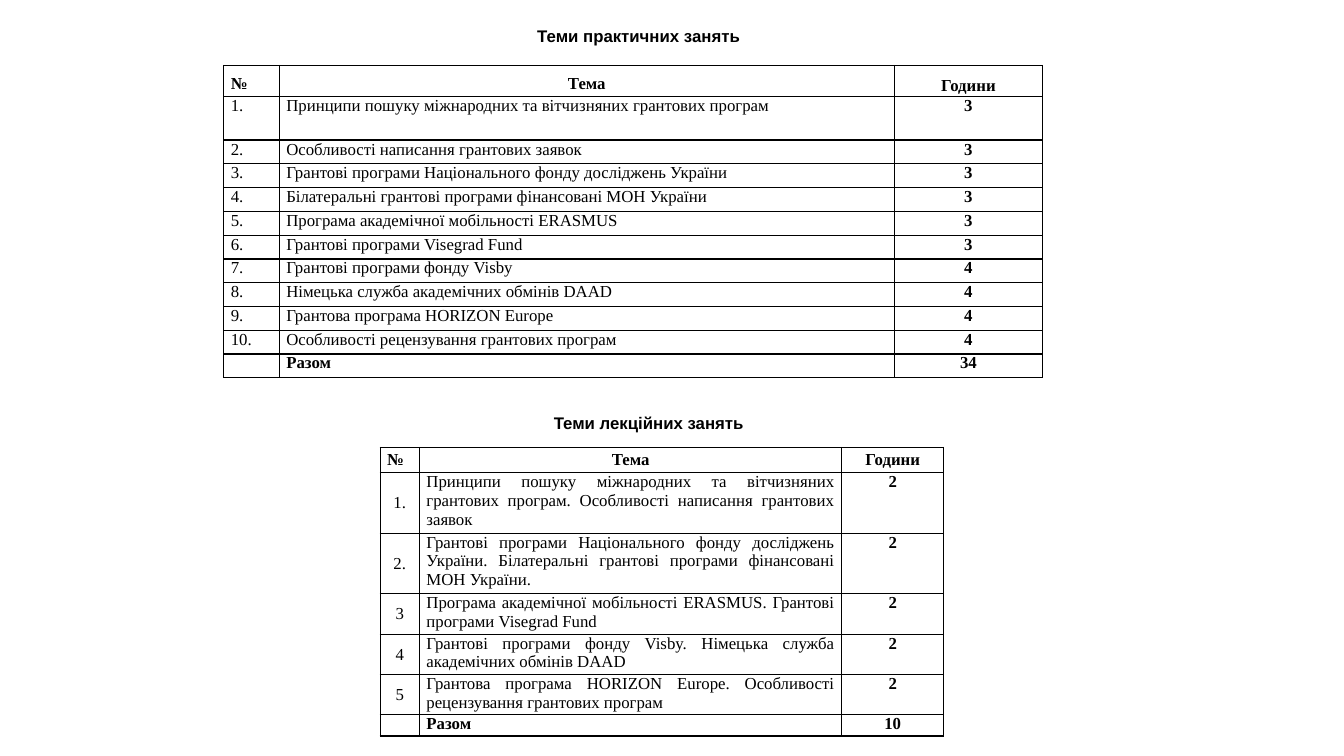
from dataclasses import dataclass
from pptx import Presentation
from pptx.dml.color import RGBColor as RGB
from pptx.enum.text import MSO_ANCHOR as Anchor, MSO_AUTO_SIZE as Fit, PP_ALIGN as Align
from pptx.oxml import parse_xml
from pptx.oxml.ns import nsdecls
from pptx.util import Inches, Pt


@dataclass(frozen=True)
class Theme:
    ink: str = "000000"
    head: str = "Arial"
    body: str = "Times New Roman"
    size: int = 12
    line: int = 1


THEME = Theme()

LABS = [
    ("1.", "Принципи пошуку міжнародних та вітчизняних грантових програм", "3"),
    ("2.", "Особливості написання грантових заявок", "3"),
    ("3.", "Грантові програми Національного фонду досліджень України", "3"),
    ("4.", "Білатеральні грантові програми фінансовані МОН України", "3"),
    ("5.", "Програма академічної мобільності ERASMUS", "3"),
    ("6.", "Грантові програми Visegrad Fund", "3"),
    ("7.", "Грантові програми фонду Visby", "4"),
    ("8.", "Німецька служба академічних обмінів DAAD", "4"),
    ("9.", "Грантова програма HORIZON Europe", "4"),
    ("10.", "Особливості рецензування грантових програм", "4"),
    ("", "Разом", "34"),
]
TALKS = [
    ("1.", "Принципи пошуку міжнародних та вітчизняних грантових програм. "
           "Особливості написання грантових заявок", "2"),
    ("2.", "Грантові програми Національного фонду досліджень України. "
           "Білатеральні грантові програми фінансовані МОН України.", "2"),
    ("3", "Програма академічної мобільності ERASMUS. Грантові програми Visegrad Fund", "2"),
    ("4", "Грантові програми фонду Visby. Німецька служба академічних обмінів DAAD", "2"),
    ("5", "Грантова програма HORIZON Europe. Особливості рецензування грантових програм", "2"),
    ("", "Разом", "10"),
]


def write(frame, text, font=THEME.body, bold=False, align=Align.CENTER, space=1.0):
    para = frame.paragraphs[0]
    para.alignment = align
    para.line_spacing = space
    if not text:
        para._p.append(parse_xml(
            f'<a:endParaRPr {nsdecls("a")} sz="{THEME.size * 100}"/>'))
        return
    run = para.add_run()
    run.text = text
    run.font.name = font
    run.font.size = Pt(THEME.size)
    run.font.bold = bold
    run.font.color.rgb = RGB.from_string(THEME.ink)


def heading(shape, box, text):
    shape.left, shape.top, shape.width, shape.height = map(Inches, box)
    frame = shape.text_frame
    frame.word_wrap = False
    frame.auto_size = Fit.SHAPE_TO_FIT_TEXT
    frame.vertical_anchor = Anchor.MIDDLE
    write(frame, text, font=THEME.head, bold=True)


def border(cell):
    props = cell._tc.get_or_add_tcPr()
    for side in "LRTB":
        props.append(parse_xml(
            f'<a:ln{side} {nsdecls("a")} w="{Pt(THEME.line)}"><a:solidFill>'
            f'<a:srgbClr val="{THEME.ink}"/></a:solidFill></a:ln{side}>'))


def plan(slide, box, cols, highs, rows, space, mid):
    rows = [("№", "Тема", "Години")] + rows
    grid = slide.shapes.add_table(len(rows), len(cols), *map(Inches, box)).table
    grid.first_row = grid.horz_banding = False
    for col, wide in zip(grid.columns, cols):
        col.width = Inches(wide)
    for r, (row, high) in enumerate(zip(rows, highs)):
        grid.rows[r].height = Inches(high)
        top, total = r == 0, r == len(rows) - 1
        for c, text in enumerate(row):
            cell = grid.cell(r, c)
            border(cell)
            cell.fill.background()
            cell.margin_left = cell.margin_right = Inches(0.07)
            cell.margin_top = cell.margin_bottom = 0
            number = mid and c == 0 and not top
            central = c == 2 or (top and c == 1) or number
            if number or (top and c == 2):
                cell.vertical_anchor = Anchor.MIDDLE
            write(cell.text_frame, text, bold=top or total or c == 2,
                  align=Align.CENTER if central else Align.JUSTIFY,
                  space=space[c] if top else 1.0)


def main():
    deck = Presentation()
    deck.slide_width, deck.slide_height = Inches(13.33), Inches(7.5)
    slide = deck.slides.add_slide(deck.slide_layouts[5])
    heading(slide.shapes.title, (5.22, 0.21, 2.23, 0.3), "Теми практичних занять")
    plan(slide, (2.22, 0.65, 8.12, 3.1), (0.55, 6.1, 1.47),
         [0.31, 0.43] + [0.236] * 10, LABS, (1.5, 1.5, 1.5), False)
    box = (-0.23, 3.94, 13.33, 0.5)
    heading(slide.shapes.add_textbox(*map(Inches, box)), box, "Теми лекційних занять")
    plan(slide, (3.77, 4.44, 5.59, 2.86), (0.39, 4.19, 1.01),
         [0.25] + [0.6] * 2 + [0.4] * 3 + [0.21], TALKS, (1.15, 1.15, 1.0), True)
    deck.save("out.pptx")


if __name__ == "__main__":
    main()
